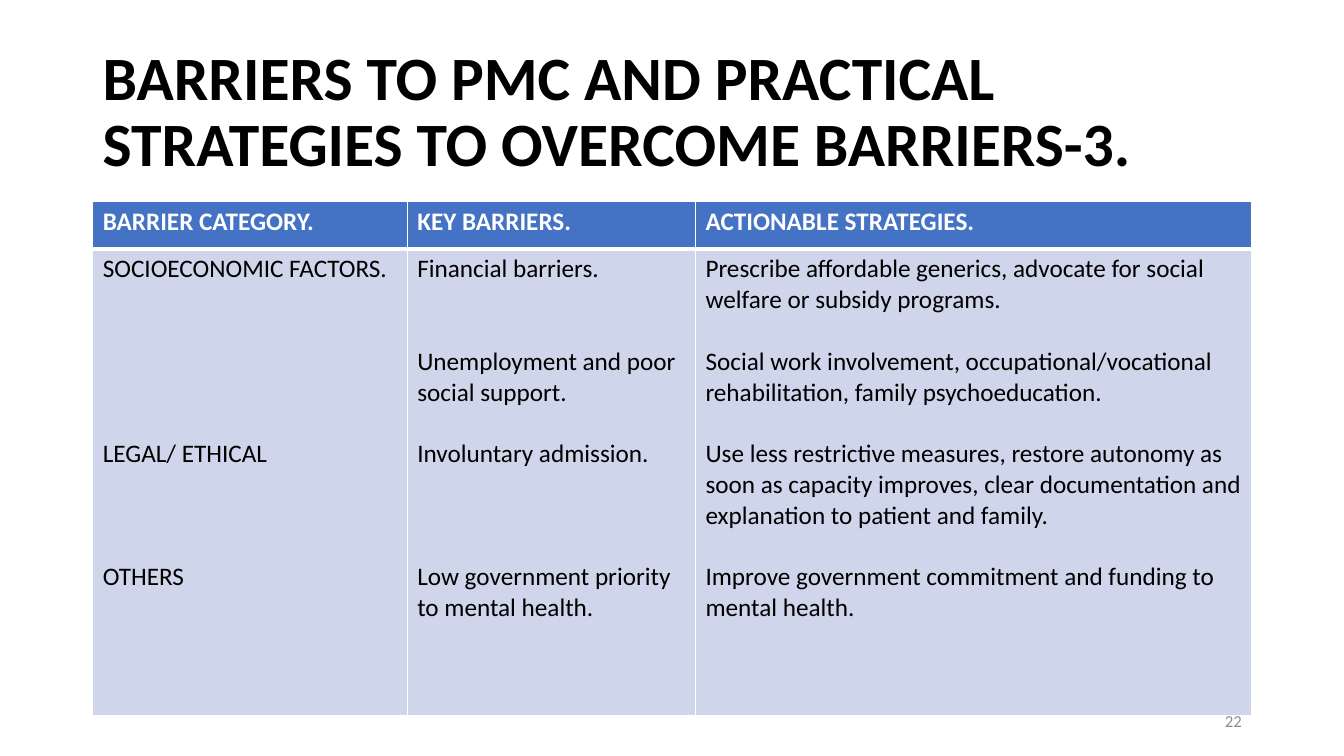
import pptx
import pptx.dml.color
import pptx.enum.text
import pptx.oxml
import pptx.oxml.ns
import pptx.util

Pt = pptx.util.Pt
RGBColor = pptx.dml.color.RGBColor
ALIGN = pptx.enum.text.PP_ALIGN
MIDDLE = pptx.enum.text.MSO_ANCHOR.MIDDLE

BLACK = RGBColor(0x00, 0x00, 0x00)
WHITE = RGBColor(0xFF, 0xFF, 0xFF)
GRAY = RGBColor(0x8C, 0x8C, 0x8C)
HEADER_BLUE = RGBColor(0x44, 0x72, 0xC4)
BODY_BLUE = RGBColor(0xCF, 0xD5, 0xEA)
LINE_HEIGHT = 21.97  # one 18 pt line


def write(para, text, size, color, bold=False):
    span = para.add_run()
    span.text = text
    for name, value in {"name": "Calibri", "size": Pt(size), "bold": bold}.items():
        setattr(span.font, name, value)
    span.font.color.rgb = color


def add_border(cell, side, width):
    cell._tc.get_or_add_tcPr().append(pptx.oxml.parse_xml(
        f'<a:{side} {pptx.oxml.ns.nsdecls("a")} w="{Pt(width)}">'
        f'<a:solidFill><a:srgbClr val="{WHITE}"/></a:solidFill></a:{side}>'))


deck = pptx.Presentation()
deck.slide_width, deck.slide_height = Pt(960), Pt(540)
page = deck.slides.add_slide(deck.slide_layouts[6])

# Title and page number
labels = [
    ("BARRIERS TO PMC AND PRACTICAL STRATEGIES TO OVERCOME BARRIERS-3.",
     (66.24, 28.8, 828, 104.4), 44, BLACK, True,
     {"alignment": ALIGN.LEFT, "line_spacing": 0.9}),
    ("22", (678.24, 500.4, 216, 28.8), 12, GRAY, False, {"alignment": ALIGN.RIGHT}),
]
for text, place, size, color, bold, formats in labels:
    box = page.shapes.add_textbox(*map(Pt, place))
    box.text_frame.word_wrap = True
    box.text_frame.vertical_anchor = MIDDLE
    para = box.text_frame.paragraphs[0]
    for name, value in formats.items():
        setattr(para, name, value)
    write(para, text, size, color, bold)

# Table content: heading, width, and entries with the lines left free above each
columns = [
    ("BARRIER CATEGORY.", 224.64, [
        (0, "SOCIOECONOMIC FACTORS."),
        (5, "LEGAL/ ETHICAL"),
        (3, "OTHERS")]),
    ("KEY BARRIERS.", 205.92, [
        (0, "Financial barriers."),
        (2, "Unemployment and poor social support."),
        (1, "Involuntary admission."),
        (3, "Low government priority to mental health.")]),
    ("ACTIONABLE STRATEGIES.", 397.44, [
        (0, "Prescribe affordable generics, advocate for social welfare or subsidy programs."),
        (1, "Social work involvement, occupational/vocational rehabilitation, "
            "family psychoeducation."),
        (1, "Use less restrictive measures, restore autonomy as soon as capacity improves, "
            "clear documentation and explanation to patient and family."),
        (1, "Improve government commitment and funding to mental health.")]),
]
row_heights = [33.84, 333.36]
table = page.shapes.add_table(
    2, 3, Pt(66.24), Pt(144), Pt(828), Pt(sum(row_heights))).table
for row, height in zip(table.rows, row_heights):
    row.height = Pt(height)

# Header and body cells, with a thick rule between them
row_styles = [
    (HEADER_BLUE, WHITE, True, {"lnL": 1, "lnR": 1, "lnT": 1, "lnB": 3}),
    (BODY_BLUE, BLACK, False, {"lnL": 1, "lnR": 1, "lnT": 3, "lnB": 1}),
]
for col, (heading, width, entries) in enumerate(columns):
    table.columns[col].width = Pt(width)
    for row, (fill, color, bold, borders) in enumerate(row_styles):
        cell = table.cell(row, col)
        for side, thickness in borders.items():
            add_border(cell, side, thickness)
        cell.fill.solid()
        cell.fill.fore_color.rgb = fill
        for index, (gap, text) in enumerate(entries if row else [(0, heading)]):
            frame = cell.text_frame
            para = frame.add_paragraph() if index else frame.paragraphs[0]
            if gap:
                para.space_before = Pt(round(gap * LINE_HEIGHT, 2))
            write(para, text, 18, color, bold)

deck.save("out.pptx")
